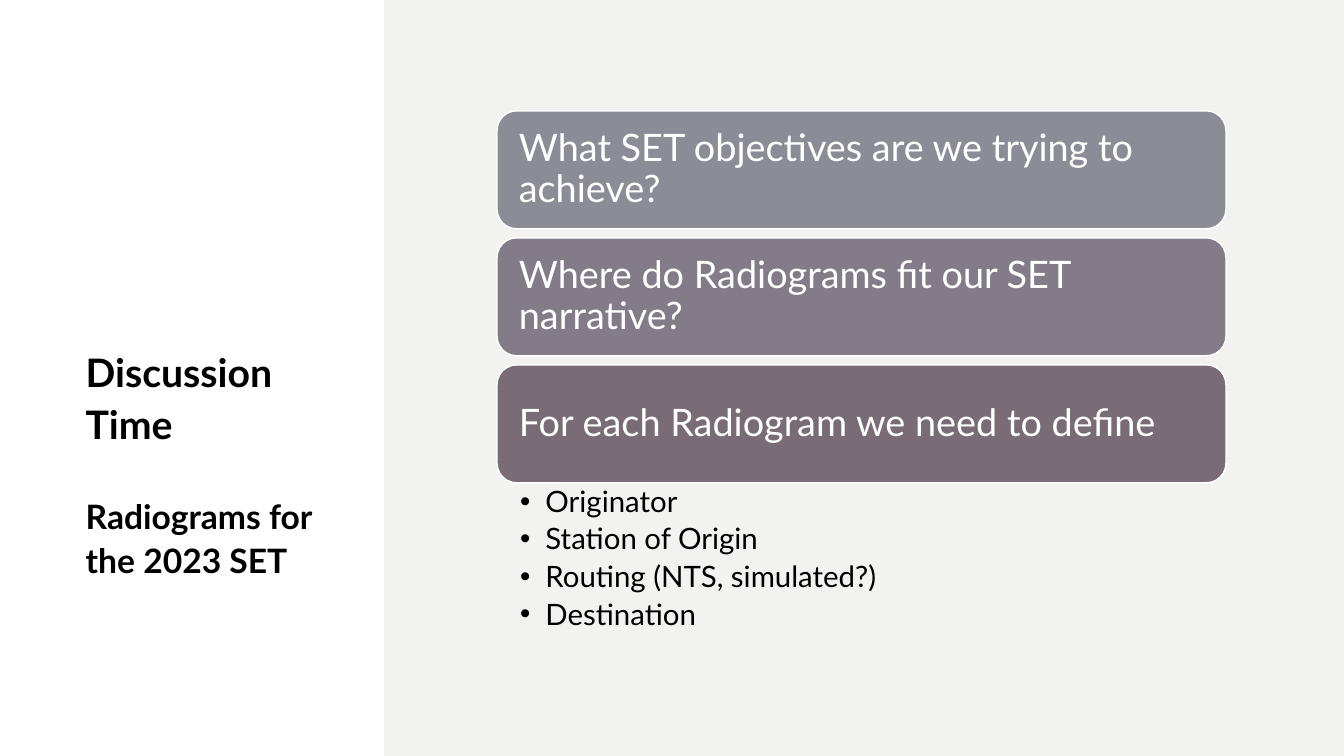
"""Build the discussion slide on radiograms for the 2023 SET."""
from lxml import etree
from pptx import Presentation, util as u
from pptx.dml.color import RGBColor
from pptx.enum import shapes, text
from pptx.oxml.ns import qn

THEME = {
    "font": "Lato", "ink": "000000", "paper": "FFFFFF", "panel": "F2F3F1",
    "cards": ("8C8C96", "847B89", "7A6C76"),
    "title": 28, "subtitle": 24, "question": 27, "item": 21,
}
QUESTIONS = (
    "What SET objectives are we trying to achieve?",
    "Where do Radiograms fit our SET narrative?",
    "For each Radiogram we need to define",
)
ITEMS = ("Originator", "Station of Origin", "Routing (NTS, simulated?)", "Destination")
CARD_X, CARD_Y, CARD_W, CARD_H, PITCH = 4.93, 1.1, 7.23, 1.17, 1.26


def place(sp, x, y, w, h):
    sp.left, sp.top, sp.width, sp.height = (u.Inches(v) for v in (x, y, w, h))


def add_run(p, words, size, color, bold=False):
    r = p.add_run()
    r.text = words
    r.font.name, r.font.size, r.font.bold = THEME["font"], u.Pt(size), bold
    r.font.color.rgb = RGBColor.from_string(color)


prs = Presentation()
prs.slide_width, prs.slide_height = u.Inches(13.33), u.Inches(7.5)
s = prs.slides.add_slide(prs.slide_layouts[1])
s.background.fill.solid()
s.background.fill.fore_color.rgb = RGBColor.from_string(THEME["paper"])

panel_x = prs.slide_width * 2 // 7
panel = s.shapes.add_shape(shapes.MSO_SHAPE.RECTANGLE, panel_x, 0,
                           prs.slide_width - panel_x, prs.slide_height)
panel.shadow.inherit = False
panel.fill.solid()
panel.fill.fore_color.rgb = RGBColor.from_string(THEME["panel"])
panel.line.fill.background()
s.shapes._spTree.insert(2, panel._element)

title = s.shapes.title
place(title, 0.75, 2.3, 2.54, 3.51)
tf = title.text_frame
tf.auto_size, tf.word_wrap = text.MSO_AUTO_SIZE.NONE, True
tf.vertical_anchor = text.MSO_ANCHOR.BOTTOM
for i, (words, size, gap) in enumerate((
        ("Discussion Time", THEME["title"], 0),
        ("Radiograms for the 2023 SET", THEME["subtitle"], 32))):
    p = tf.add_paragraph() if i else tf.paragraphs[0]
    p.alignment, p.line_spacing, p.space_before = text.PP_ALIGN.LEFT, 1.1, u.Pt(gap)
    add_run(p, words, size, THEME["ink"], bold=True)

for i, (question, color) in enumerate(zip(QUESTIONS, THEME["cards"])):
    card = s.shapes.add_shape(shapes.MSO_SHAPE.ROUNDED_RECTANGLE, 0, 0, 0, 0)
    place(card, CARD_X, CARD_Y + i * PITCH, CARD_W, CARD_H)
    card.shadow.inherit = False
    card.fill.solid()
    card.fill.fore_color.rgb = RGBColor.from_string(color)
    card.line.color.rgb = RGBColor.from_string(THEME["paper"])
    card.line.width = u.Pt(1)
    tf = card.text_frame
    tf.word_wrap, tf.vertical_anchor = True, text.MSO_ANCHOR.MIDDLE
    tf.margin_left = tf.margin_right = u.Inches(0.16)
    p = tf.paragraphs[0]
    p.alignment, p.line_spacing = text.PP_ALIGN.LEFT, 0.9
    add_run(p, question, THEME["question"], THEME["paper"])

body = s.placeholders[1]
place(body, CARD_X, CARD_Y + 2 * PITCH + CARD_H, CARD_W, 1.59)
tf = body.text_frame
tf.auto_size, tf.word_wrap = text.MSO_AUTO_SIZE.NONE, True
tf.vertical_anchor = text.MSO_ANCHOR.TOP
tf.margin_left, tf.margin_right = u.Inches(0.23), u.Inches(0.21)
tf.margin_top = tf.margin_bottom = u.Inches(0.04)
for i, item in enumerate(ITEMS):
    p = tf.add_paragraph() if i else tf.paragraphs[0]
    p.alignment, p.line_spacing = text.PP_ALIGN.LEFT, 0.9
    p.space_before, p.space_after = u.Pt(0), u.Pt(0.2 * THEME["item"])
    pPr = p._p.get_or_add_pPr()
    pPr.set("marL", str(u.Inches(0.25)))
    pPr.set("indent", str(u.Inches(-0.25)))
    etree.SubElement(pPr, qn("a:buChar")).set("char", "•")
    add_run(p, item, THEME["item"], THEME["ink"])

prs.save("out.pptx")
